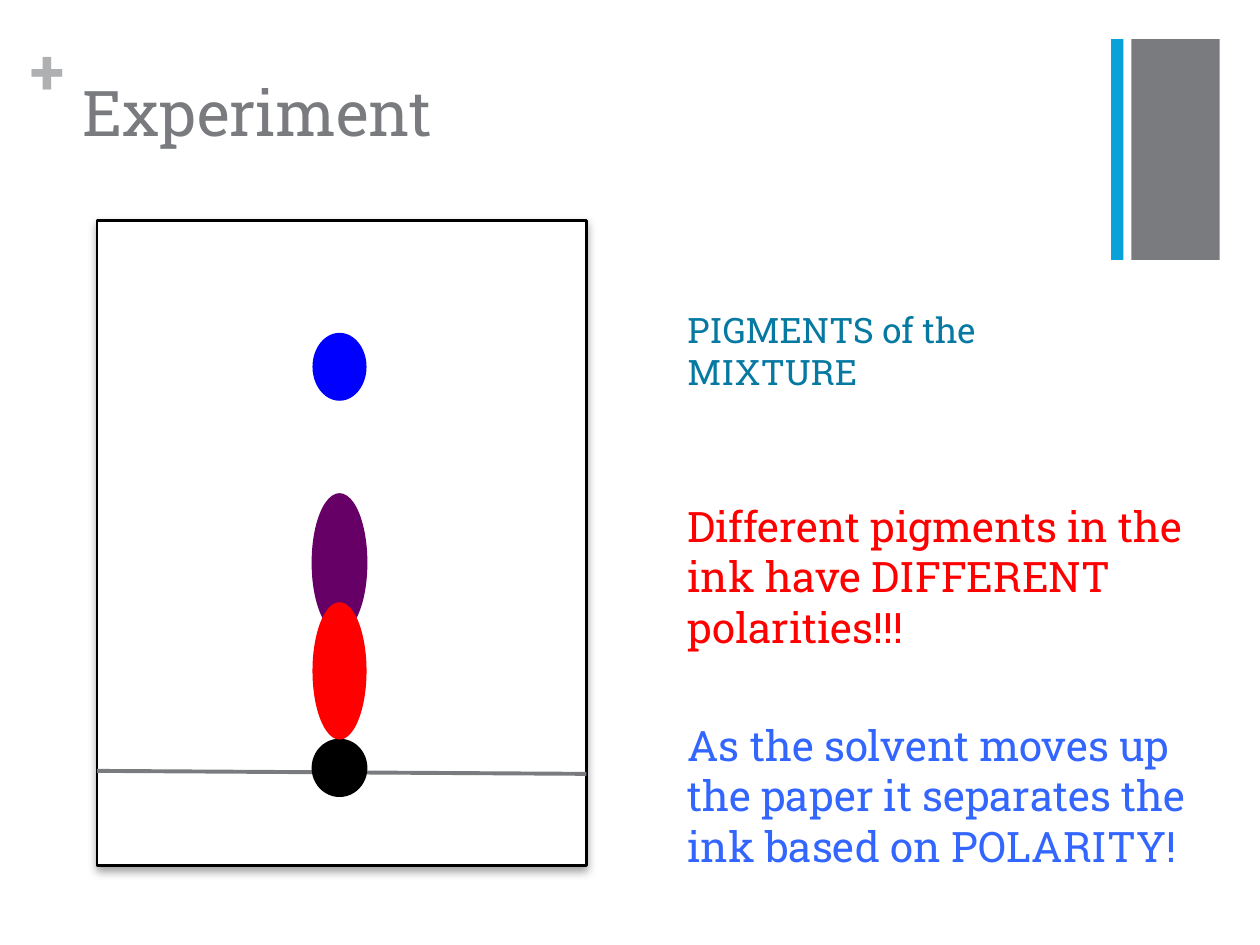
from dataclasses import dataclass

from lxml.etree import SubElement
from pptx import Presentation
from pptx.dml.color import RGBColor
from pptx.enum.shapes import MSO_CONNECTOR, MSO_SHAPE
from pptx.enum.text import MSO_ANCHOR, MSO_AUTO_SIZE, PP_ALIGN
from pptx.oxml.ns import qn
from pptx.util import Cm, Pt


@dataclass(frozen=True)
class Theme:
    font: str = "Roboto Slab"
    gray: str = "797B7E"
    light_gray: str = "AFB0B2"
    cyan: str = "08A1D9"
    teal: str = "0679A3"
    red: str = "FF0000"
    sky: str = "3366FF"
    blue: str = "0000FF"
    purple: str = "660066"
    black: str = "000000"
    white: str = "FFFFFF"
    shadow: str = "808080"
    title_size: int = 36
    body_size: int = 24
    label_size: int = 20


T = Theme()

TITLE = ("Experiment", (1.4, 1.35, 20.98, 3.1))
PLUS = ("+", (0.61, 0.64, 0.74, 1.55))

BAR_TOP, BAR_HEIGHT = 0.79, 4.45
BARS = [(22.81, 1.78, T.gray), (22.4, 0.25, T.cyan)]

PAPER = (1.96, 4.45, 9.86, 13)
START_LINE = (15.54, 15.6)

SPOT_LEFT, SPOT_WIDTH = 6.3, 1.09
SPOTS = [
    (14.91, 1.14, T.black, T.black),
    (9.96, 2.77, T.purple, T.purple),
    (12.14, 2.77, T.red, None),
    (6.71, 1.37, T.blue, None),
]

NOTE_LEFT = 13.61
NOTES = [
    ("PIGMENTS of the MIXTURE", 6.1, 9.35, 1.96, T.label_size, T.teal),
    ("Different pigments in the ink have DIFFERENT polarities!!!",
     9.96, 10.74, 3.33, T.body_size, T.red),
    ("As the solvent moves up the paper it separates the ink based on POLARITY!",
     14.38, 10.74, 3.33, T.body_size, T.sky),
]


def rgb(color):
    return RGBColor.from_string(color)


def write(sp, text, size, color, bold=False):
    tf = sp.text_frame
    tf.text = text
    tf.word_wrap = True
    tf.auto_size = MSO_AUTO_SIZE.NONE
    tf.vertical_anchor = MSO_ANCHOR.TOP
    p = tf.paragraphs[0]
    p.alignment = PP_ALIGN.LEFT
    font = p.runs[0].font
    font.name, font.size, font.bold = T.font, Pt(size), bold
    font.color.rgb = rgb(color)
    return tf


def add_text(s, text, box, size, color, bold=False):
    sp = s.shapes.add_textbox(*map(Cm, box))
    return write(sp, text, size, color, bold)


def add_shape(s, kind, box, fill, line=None, width=1):
    sp = s.shapes.add_shape(kind, *map(Cm, box))
    sp.shadow.inherit = False
    sp.fill.solid()
    sp.fill.fore_color.rgb = rgb(fill)
    if line:
        sp.line.color.rgb = rgb(line)
        sp.line.width = Pt(width)
    else:
        sp.line.fill.background()
    return sp


def add_drop_shadow(sp):
    effects = sp._element.spPr.find(qn("a:effectLst"))
    shadow = SubElement(effects, qn("a:outerShdw"), blurRad=str(Pt(5)),
                        dist=str(Pt(2)), dir="5400000", rotWithShape="0")
    color = SubElement(shadow, qn("a:srgbClr"), val=T.shadow)
    SubElement(color, qn("a:alpha"), val="75000")


def add_decoration(s):
    for left, width, color in BARS:
        add_shape(s, MSO_SHAPE.RECTANGLE, (left, BAR_TOP, width, BAR_HEIGHT), color)
    text, box = PLUS
    tf = add_text(s, text, box, T.title_size, T.light_gray, bold=True)
    tf.margin_left = tf.margin_top = tf.margin_right = tf.margin_bottom = 0


def add_title(s):
    text, box = TITLE
    title = s.shapes.title
    title.left, title.top, title.width, title.height = map(Cm, box)
    write(title, text, T.title_size, T.gray)


def add_chromatogram(s):
    add_drop_shadow(add_shape(s, MSO_SHAPE.RECTANGLE, PAPER, T.white, T.black, 1.5))
    left, _, width, _ = PAPER
    y1, y2 = START_LINE
    line = s.shapes.add_connector(
        MSO_CONNECTOR.STRAIGHT, Cm(left), Cm(y1), Cm(left + width), Cm(y2))
    line.line.color.rgb = rgb(T.gray)
    line.line.width = Pt(2.25)
    SubElement(line._element.spPr, qn("a:effectLst"))
    for top, height, fill, outline in SPOTS:
        add_shape(s, MSO_SHAPE.OVAL, (SPOT_LEFT, top, SPOT_WIDTH, height), fill, outline)


def main():
    prs = Presentation()
    prs.slide_width, prs.slide_height = Cm(25.4), Cm(19.05)
    s = prs.slides.add_slide(prs.slide_layouts[5])
    add_decoration(s)
    add_title(s)
    add_chromatogram(s)
    for text, top, width, height, size, color in NOTES:
        add_text(s, text, (NOTE_LEFT, top, width, height), size, color)
    prs.save("out.pptx")


if __name__ == "__main__":
    main()
